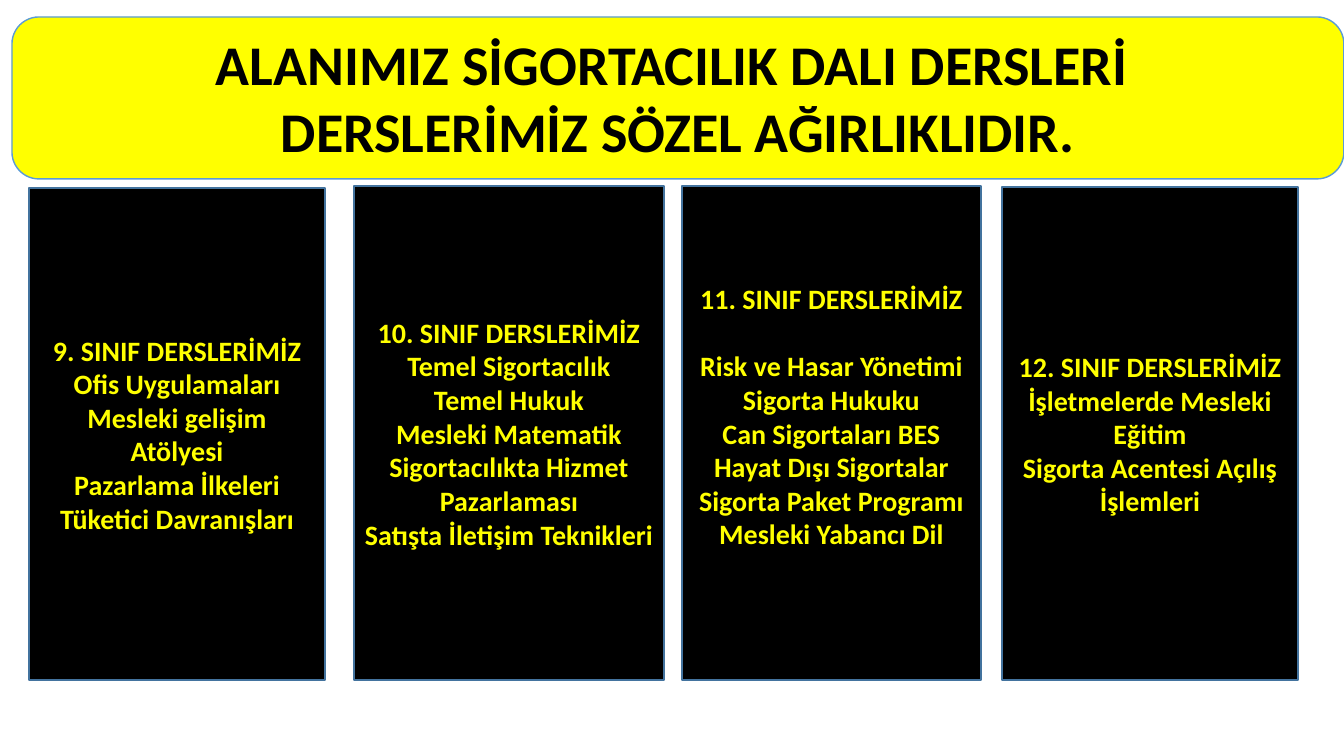
import pptx
import pptx.dml.color
import pptx.enum.shapes
import pptx.enum.text
import pptx.util

RGBColor = pptx.dml.color.RGBColor
MSO_SHAPE = pptx.enum.shapes.MSO_SHAPE
ANCHOR = pptx.enum.text.MSO_ANCHOR

YELLOW = RGBColor(0xFF, 0xFF, 0x00)
BLACK = RGBColor(0x00, 0x00, 0x00)
LIGHT_BLUE = RGBColor(0x5B, 0x9B, 0xD5)
DARK_BLUE = RGBColor(0x43, 0x73, 0x9E)
EMU_PER_PX = 914400 / 100.8
LINE_HEIGHT = 34  # one line of course text, in px


def px(length):
    return pptx.util.Emu(round(length * EMU_PER_PX))


def add_panel(page, kind, place, fill, outline, lines, text_format):
    """Add a filled, outlined shape with one centred paragraph per line."""
    panel = page.shapes.add_shape(kind, *map(px, place))
    panel.shadow.inherit = False
    panel.fill.solid()
    panel.fill.fore_color.rgb = fill
    panel.line.color.rgb = outline
    panel.line.width = pptx.util.Pt(1)
    frame = panel.text_frame
    frame.word_wrap = True
    for index, line in enumerate(lines):
        para = frame.add_paragraph() if index else frame.paragraphs[0]
        para.alignment = pptx.enum.text.PP_ALIGN.CENTER
        span = para.add_run()
        span.text = line
        for name, value in text_format.items():
            setattr(span.font, name, value)
        span.font.color.rgb = BLACK if fill == YELLOW else YELLOW
    return frame


deck = pptx.Presentation()
deck.slide_width, deck.slide_height = px(1344), px(756)
page = deck.slides.add_slide(deck.slide_layouts[6])

title_format = {"name": "Calibri", "size": pptx.util.Pt(40), "bold": True}
course_format = {**title_format, "size": pptx.util.Pt(20)}

title = add_panel(
    page, MSO_SHAPE.ROUNDED_RECTANGLE, (12, 17, 1332, 162), YELLOW, LIGHT_BLUE,
    ["ALANIMIZ SİGORTACILIK DALI DERSLERİ ", "DERSLERİMİZ SÖZEL AĞIRLIKLIDIR."],
    title_format)
title.vertical_anchor = ANCHOR.TOP

# grade: left, top, width, courses
grades = {
    9: (29, 188, 296, ["Ofis Uygulamaları", "Mesleki gelişim Atölyesi",
                       "Pazarlama İlkeleri", "Tüketici Davranışları"]),
    10: (354, 186, 310, ["Temel Sigortacılık", "Temel Hukuk", "Mesleki Matematik",
                         "Sigortacılıkta Hizmet Pazarlaması",
                         "Satışta İletişim Teknikleri"]),
    11: (682, 186, 299, ["Risk ve Hasar Yönetimi", "Sigorta Hukuku",
                         "Can Sigortaları BES", "Hayat Dışı Sigortalar",
                         "Sigorta Paket Programı", "Mesleki Yabancı Dil"]),
    12: (1002, 187, 296, ["İşletmelerde Mesleki Eğitim",
                          "Sigorta Acentesi Açılış İşlemleri"]),
}
BOTTOM = 680

for grade, (left, top, width, courses) in grades.items():
    frame = add_panel(
        page, MSO_SHAPE.RECTANGLE, (left, top, width, BOTTOM - top), BLACK, DARK_BLUE,
        [f"{grade}. SINIF DERSLERİMİZ", *courses], course_format)
    frame.vertical_anchor = ANCHOR.MIDDLE
    if grade == 11:  # one free line under the heading and one under the list
        frame.paragraphs[1].space_before = px(LINE_HEIGHT)
        frame.margin_bottom = px(5 + LINE_HEIGHT)

deck.save("out.pptx")
